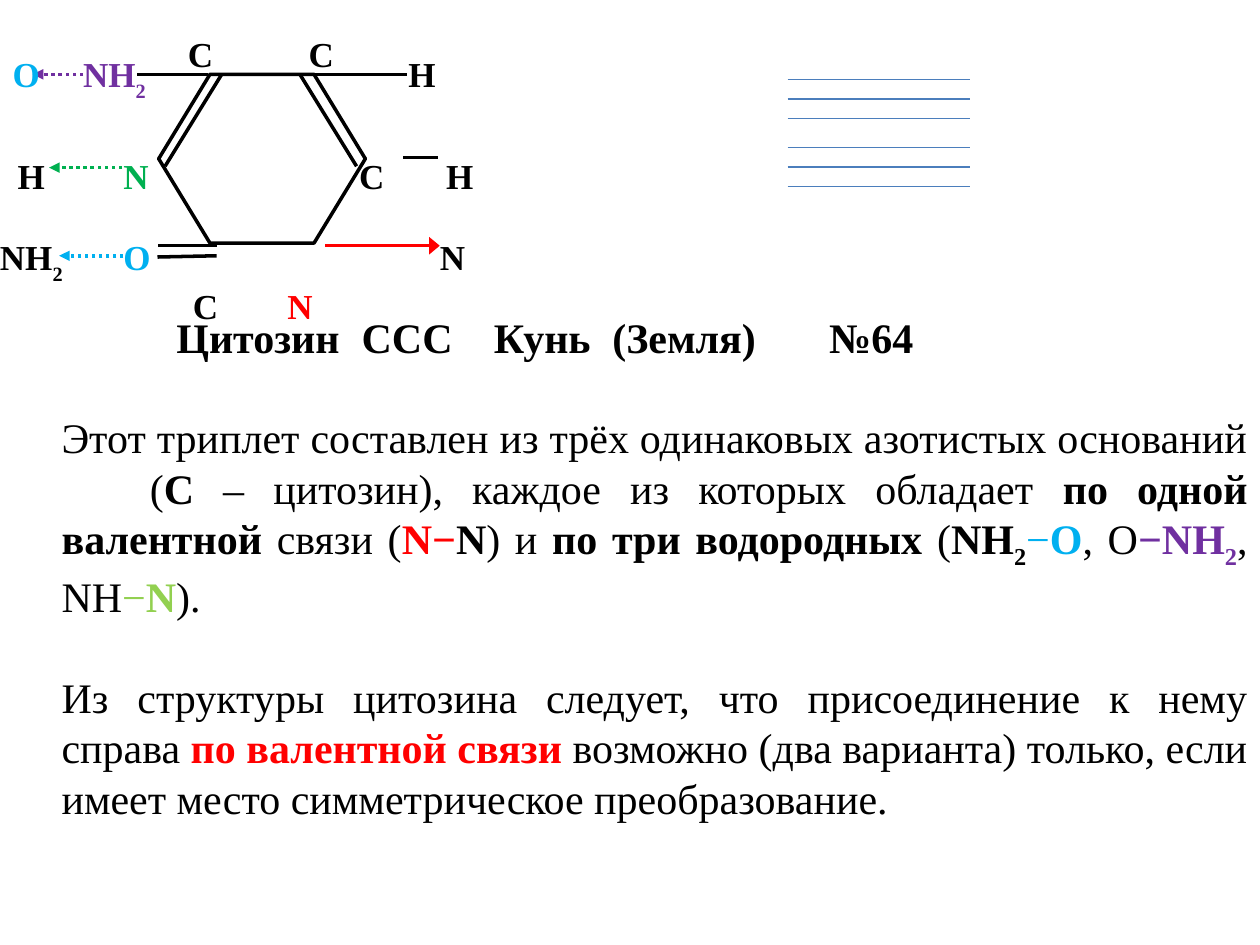
import pptx
import pptx.util
import pptx.dml.color
import pptx.enum.dml
import pptx.enum.shapes
import pptx.enum.text
import pptx.oxml
import pptx.oxml.ns
from pptx.util import Inches

FONT = "Times New Roman"
HARD_SPACE = chr(160)
COLORS = {
    "black": "000000", "white": "FFFFFF", "red": "FF0000", "green": "00B050",
    "lime": "92D050", "blue": "00B0F0", "purple": "7030A0", "rule": "4B7EBC",
}

TITLE = "Цитозин\tCCC\tКунь\t(Земля)\t№64"
TITLE_TABS = [1.47, 2.52, 3.46, 5.18]

BODY = [
    [
        ("Этот триплет составлен из трёх одинаковых азотистых оснований", "black", False),
        "break",
        ("\t(", "black", False),
        ("С", "black", True),
        (" – цитозин), каждое из которых обладает ", "black", False),
        ("по одной валентной ", "black", True),
        ("связи (", "black", False),
        ("N−", "red", True),
        ("N", "black", True),
        (") и ", "black", False),
        ("по три водородных ", "black", True),
        ("(", "black", False),
        ("NH", "black", True),
        ("2", "black", True, -25),
        ("−", "blue", False),
        ("O", "blue", True),
        (", O", "black", False),
        ("−NH", "purple", True),
        ("2", "purple", True, -25),
        (", NH", "black", False),
        ("−", "lime", False),
        ("N", "lime", True),
        (").", "black", False),
    ],
    [
        ("Из структуры цитозина следует, что присоединение к нему справа" + HARD_SPACE,
         "black", False),
        ("по валентной связи ", "red", True),
        ("возможно (два варианта) только, если имеет место симметрическое преобразование.",
         "black", False),
    ],
]

ATOM_ROWS = [
    (0.42, [("C", 1.49, "black"), ("C", 2.45, "black")]),
    (0.58, [("O", 0.10, "blue"), ("NH2", 0.66, "purple"), ("H", 3.24, "black")]),
    (1.39, [("H", 0.14, "black"), ("N", 0.98, "green"), ("C", 2.85, "black"),
            ("H", 3.54, "black")]),
    (2.03, [("NH2", 0, "black"), ("O", 0.98, "blue"), ("N", 3.49, "black")]),
    (2.42, [("C", 1.53, "black"), ("N", 2.28, "red")]),
]

BONDS = [
    (1.65, 0.59, 1.09, 0.59), (1.76, 0.59, 1.31, 1.32), (2.38, 0.59, 2.83, 1.32),
    (1.72, 1.95, 1.25, 1.95), (1.72, 2.03, 1.25, 2.04),
    (2.50, 0.59, 3.23, 0.59), (3.20, 1.25, 3.48, 1.25),
]
HYDROGEN_ARROWS = [
    (0.97, 1.33, 0.39, 1.33, "green"),
    (0.98, 2.03, 0.47, 2.03, "blue"),
    (0.66, 0.59, 0.26, 0.59, "purple"),
]
VALENCE_ARROW = (2.58, 1.95, 3.49, 1.95)
TRIGRAM_TOPS = [0.63, 1.17]
TRIGRAM_STEP = 0.155


def rgb(name):
    return pptx.dml.color.RGBColor.from_string(COLORS[name])


def style(span, size, color, bold, baseline=0):
    font = span.font
    font.name, font.size, font.bold = FONT, pptx.util.Pt(size), bold
    font.color.rgb = rgb(color)
    if baseline:
        span._r.get_or_add_rPr().set("baseline", str(baseline * 1000))


def add_span(para, size, text, color, bold, baseline=0):
    span = para.add_run()
    span.text = text
    style(span, size, color, bold, baseline)


def set_tabs(para, stops):
    tabs = pptx.oxml.parse_xml(f"<a:tabLst {pptx.oxml.ns.nsdecls('a')}/>")
    for stop in stops:
        tab = tabs.makeelement(pptx.oxml.ns.qn("a:tab"),
                               {"pos": str(Inches(stop)), "algn": "l"})
        tabs.append(tab)
    para._p.get_or_add_pPr().append(tabs)


def clear_margins(frame):
    frame.margin_left = frame.margin_right = frame.margin_top = frame.margin_bottom = 0


def add_line(page, x1, y1, x2, y2, color="black", width=2, dotted=False, head=None):
    line = page.shapes.add_connector(
        pptx.enum.shapes.MSO_CONNECTOR.STRAIGHT,
        Inches(x1), Inches(y1), Inches(x2), Inches(y2))
    line.line.color.rgb = rgb(color)
    line.line.width = pptx.util.Pt(width)
    if dotted:
        line.line.dash_style = pptx.enum.dml.MSO_LINE.ROUND_DOT
    ns = pptx.oxml.ns.nsdecls("a")
    if head:
        line.line._get_or_add_ln().append(
            pptx.oxml.parse_xml(f'<a:tailEnd {ns} type="triangle" w="{head}"/>'))
    line._element.spPr.append(pptx.oxml.parse_xml(f"<a:effectLst {ns}/>"))


def add_title(page):
    title = page.shapes.title
    title.left, title.top = Inches(1.3), Inches(2.42)
    title.width, title.height = Inches(8.2), Inches(0.5)
    frame = title.text_frame
    frame.text = TITLE
    frame.vertical_anchor = pptx.enum.text.MSO_ANCHOR.MIDDLE
    para = frame.paragraphs[0]
    para.alignment = pptx.enum.text.PP_ALIGN.LEFT
    set_tabs(para, TITLE_TABS)
    for span in para.runs:
        style(span, 24, "black", True)


def add_body(page):
    box = page.shapes.add_textbox(Inches(0.39), Inches(3.27), Inches(9.61), Inches(3.3))
    frame = box.text_frame
    frame.word_wrap = True
    frame.margin_top = frame.margin_bottom = 0
    for index, spans in enumerate(BODY):
        para = frame.paragraphs[0] if index == 0 else frame.add_paragraph()
        para.alignment = pptx.enum.text.PP_ALIGN.JUSTIFY
        para.space_before = pptx.util.Pt(29 * index)
        set_tabs(para, [0.7])
        for span in spans:
            if span == "break":
                para.add_line_break()
            else:
                add_span(para, 24, *span)


def add_ring(page):
    ring = page.shapes.add_shape(
        pptx.enum.shapes.MSO_SHAPE.HEXAGON,
        Inches(1.26), Inches(0.59), Inches(1.64), Inches(1.34))
    ring.adjustments[0] = 0.304
    ring.shadow.inherit = False
    ring.fill.solid()
    ring.fill.fore_color.rgb = rgb("white")
    ring.line.color.rgb = rgb("black")
    ring.line.width = pptx.util.Pt(2)


def add_atom(page, name, left, middle, color):
    box = page.shapes.add_textbox(
        Inches(left), Inches(middle - 0.16), Inches(0.18 * len(name)), Inches(0.32))
    frame = box.text_frame
    frame.word_wrap = False
    clear_margins(frame)
    para = frame.paragraphs[0]
    add_span(para, 20, name.rstrip("2"), color, True)
    if name.endswith("2"):
        add_span(para, 20, "2", color, True, -30)


def main():
    deck = pptx.Presentation()
    deck.slide_width, deck.slide_height = Inches(10), Inches(7.5)
    page = deck.slides.add_slide(deck.slide_layouts[5])
    add_title(page)
    add_body(page)
    add_ring(page)
    for bond in BONDS:
        add_line(page, *bond)
    for arrow in HYDROGEN_ARROWS:
        add_line(page, *arrow, dotted=True, head="med")
    add_line(page, *VALENCE_ARROW, color="red", head="lg")
    for middle, atoms in ATOM_ROWS:
        for name, left, color in atoms:
            add_atom(page, name, left, middle, color)
    for top in TRIGRAM_TOPS:
        for row in range(3):
            y = top + row * TRIGRAM_STEP
            add_line(page, 6.25, y, 7.7, y, color="rule", width=0.75)
    deck.save("out.pptx")


if __name__ == "__main__":
    main()
